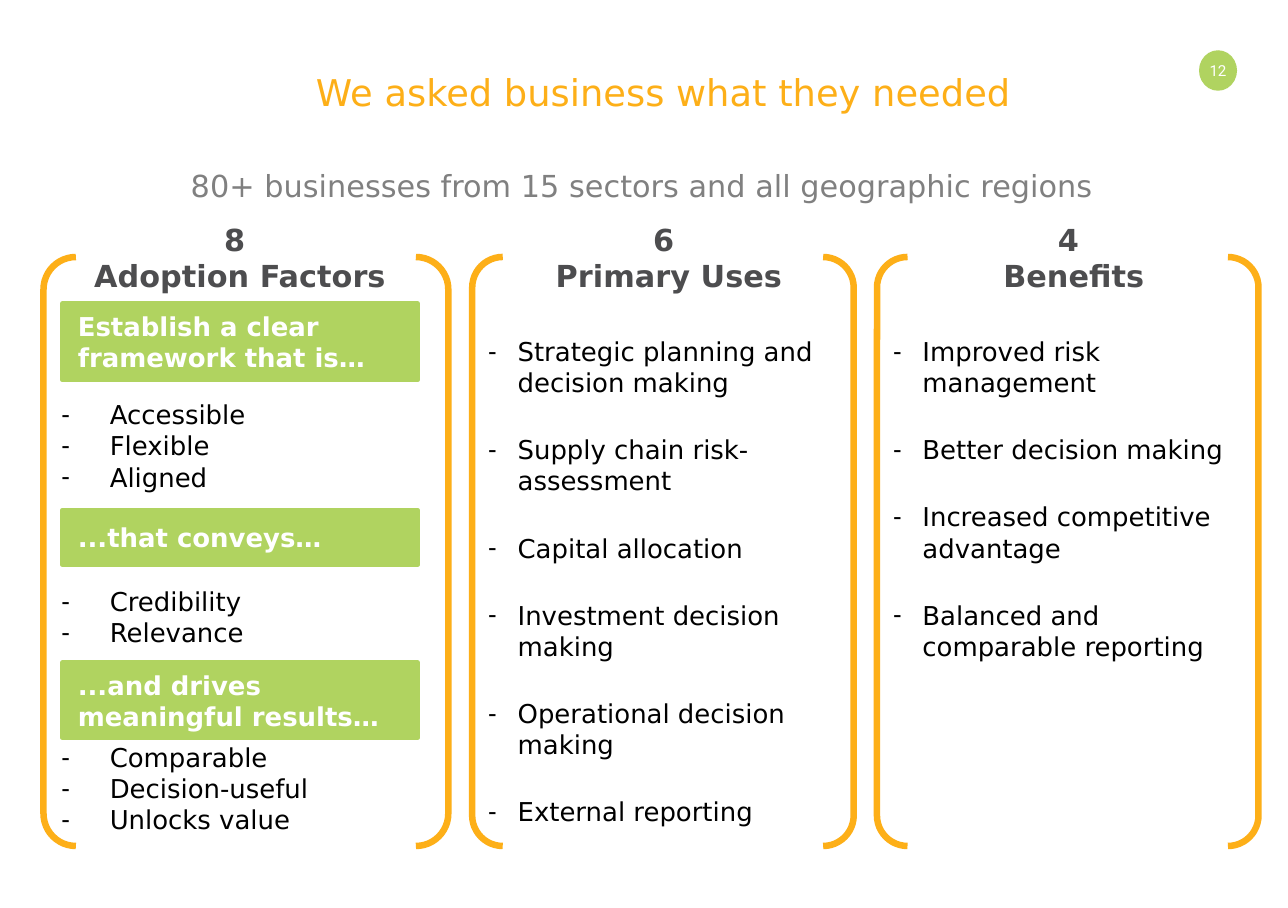
"""Build the slide on what businesses said they needed."""
from lxml.etree import SubElement
from pptx import Presentation
from pptx.dml.color import RGBColor
from pptx.enum.shapes import MSO_SHAPE as SHAPE
from pptx.enum.text import MSO_ANCHOR as ANCHOR, MSO_AUTO_SIZE as AUTO, PP_ALIGN as ALIGN
from pptx.oxml.ns import qn
from pptx.util import Cm, Pt

ORANGE, GREEN, WHITE = "FDAF18", "B0D360", "FFFFFF"
TITLE = {"name": "DejaVu Sans", "size": 17, "bold": False, "color": ORANGE}
SUBTITLE = {**TITLE, "size": 14, "color": "808080"}
HEADING = {**TITLE, "size": 14, "bold": True, "color": "4D4D4F"}
BAR = {**TITLE, "size": 12, "bold": True, "color": WHITE}
ITEM = {**TITLE, "size": 12, "color": "000000"}
NUMBER = {**TITLE, "name": "Roboto", "size": 7, "color": WHITE}


def write(sp, lines, fmt, align=ALIGN.LEFT, anchor=ANCHOR.MIDDLE, inset=(0.25, 0.13)):
    """Fill a shape with formatted paragraphs and return them."""
    tf = sp.text_frame
    tf.text = "\n".join(lines)
    frame = {"word_wrap": True, "auto_size": AUTO.NONE, "vertical_anchor": anchor,
             "margin_left": Cm(inset[0]), "margin_right": Cm(inset[0]),
             "margin_top": Cm(inset[1]), "margin_bottom": Cm(inset[1])}
    for key, value in frame.items():
        setattr(tf, key, value)
    for p in tf.paragraphs:
        spacing = {"alignment": align, "space_before": Pt(0), "space_after": Pt(0),
                   "line_spacing": Pt(round(1.2 * fmt["size"], 1))}
        for key, value in spacing.items():
            setattr(p, key, value)
        font = p.runs[0].font
        for key in ("name", "bold"):
            setattr(font, key, fmt[key])
        font.size = Pt(fmt["size"])
        font.color.rgb = RGBColor.from_string(fmt["color"])
    return tf.paragraphs


def add(kind, box, fill=None, line=None, width=2):
    """Add a flat preset shape with its box given in centimetres."""
    sp = s.shapes.add_shape(kind, *map(Cm, box))
    sp.shadow.inherit = False
    for part, color in ((sp.fill, fill), (sp.line.fill, line)):
        if color:
            part.solid()
            part.fore_color.rgb = RGBColor.from_string(color)
        else:
            part.background()
    if line:
        sp.line.width = Pt(width)
    return sp


prs = Presentation()
prs.slide_width, prs.slide_height = Cm(21), Cm(14.8)
s = prs.slides.add_slide(prs.slide_layouts.get_by_name("Comparison"))
holders = {sp.placeholder_format.idx: sp for sp in s.placeholders}

places = {0: (4.9, 1.0, 15, 1.2), 1: (2.67, 2.59, 15.6, 0.84),
          2: (1, 6.5, 6, 7.2), 3: (7.96, 5.47, 5.7, 8.2), 4: (14.56, 5.47, 5.7, 8.2)}
for idx, box in places.items():
    sp = holders[idx]
    sp.left, sp.top, sp.width, sp.height = map(Cm, box)

write(holders[0], ["We asked business what they needed"], TITLE, anchor=ANCHOR.TOP)
write(holders[1], ["80+ businesses from 15 sectors and all geographic regions"],
      SUBTITLE, ALIGN.CENTER, ANCHOR.TOP)

number = add(SHAPE.OVAL, (19.55, 0.82, 0.62, 0.66), GREEN)
write(number, ["12"], NUMBER, ALIGN.CENTER, inset=(0, 0))

columns = [
    {"heading": ["8 ", "Adoption Factors"], "at": (1.02, 5.79), "bracket": (0.71, 6.6),
     "indent": 0.79, "gap": 43.2,
     "groups": [["Accessible", "Flexible", "Aligned"], ["Credibility", "Relevance"],
                ["Comparable", "Decision-useful", "Unlocks value"]]},
    {"heading": ["6 ", "Primary Uses"], "at": (8.51, 4.8), "bracket": (7.7, 6.22),
     "indent": 0.48, "gap": 16.6,
     "groups": [["Strategic planning and decision making"], ["Supply chain risk-assessment"],
                ["Capital allocation"], ["Investment decision making"],
                ["Operational decision making"], ["External reporting"]]},
    {"heading": ["4 ", "Benefits"], "at": (15.11, 4.8), "bracket": (14.3, 6.22),
     "indent": 0.48, "gap": 16.6,
     "groups": [["Improved risk management"], ["Better decision making"],
                ["Increased competitive advantage"], ["Balanced and comparable reporting"]]},
]
for idx, col in enumerate(columns, 2):
    left, width = col["at"]
    heading = add(SHAPE.ROUNDED_RECTANGLE, (left, 3.4, width, 1.6), WHITE)
    write(heading, col["heading"], HEADING, ALIGN.CENTER)
    left, width = col["bracket"]
    bracket = add(SHAPE.DOUBLE_BRACKET, (left, 4.19, width, 9.6), None, ORANGE, 3)
    bracket.adjustments[0] = 0.08

    items = [item for group in col["groups"] for item in group]
    starts = [group[0] for group in col["groups"][1:]]
    for p in write(holders[idx], items, ITEM, anchor=ANCHOR.TOP, inset=(0, 0)):
        if p.text in starts:
            p.space_before = Pt(col["gap"])
        pPr = p._p.get_or_add_pPr()
        pPr.set("marL", str(Cm(col["indent"])))
        pPr.set("indent", str(-Cm(col["indent"])))
        SubElement(pPr, qn("a:buChar")).set("char", "-")

bars = [("Establish a clear framework that is…", 4.95, 1.25),
        ("...that conveys…", 8.31, 0.9),
        ("...and drives meaningful results…", 10.8, 1.23)]
for text, top, height in bars:
    write(add(SHAPE.RECTANGLE, (1.02, top, 5.79, height), GREEN, GREEN), [text], BAR)

prs.save("out.pptx")
